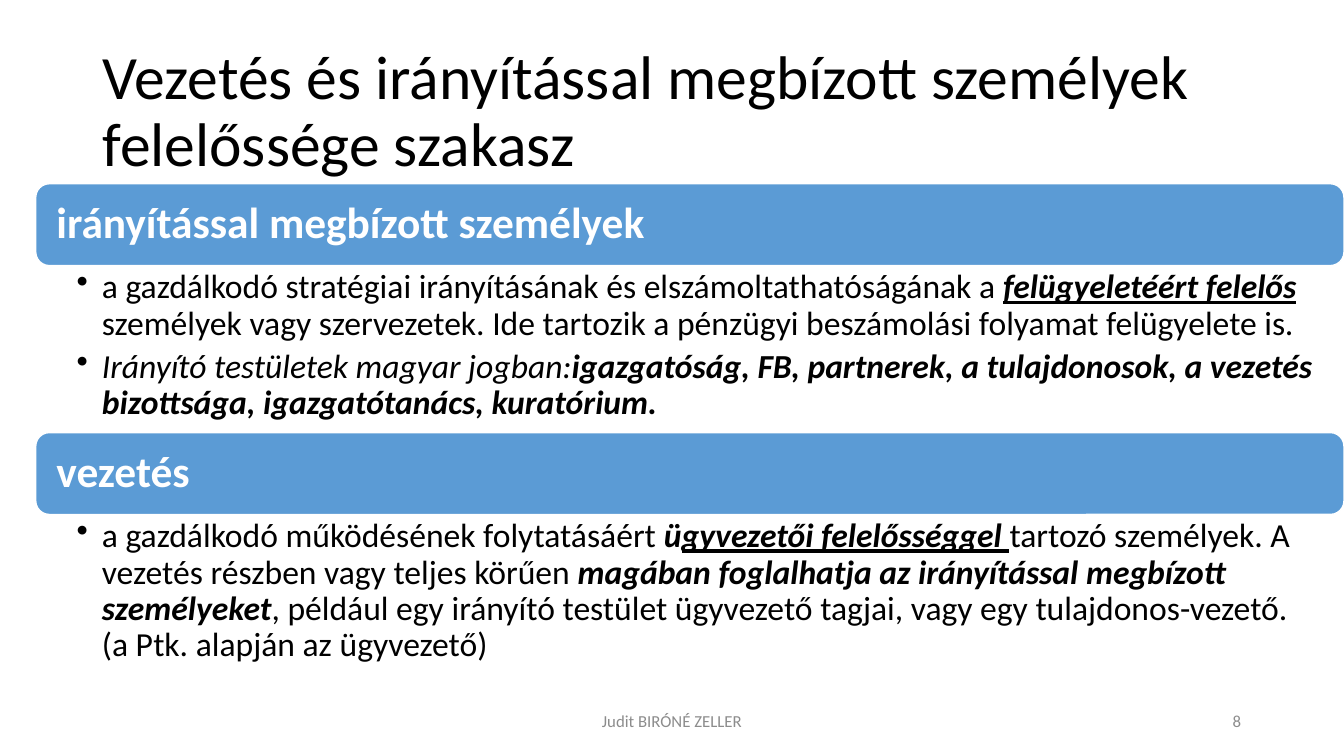
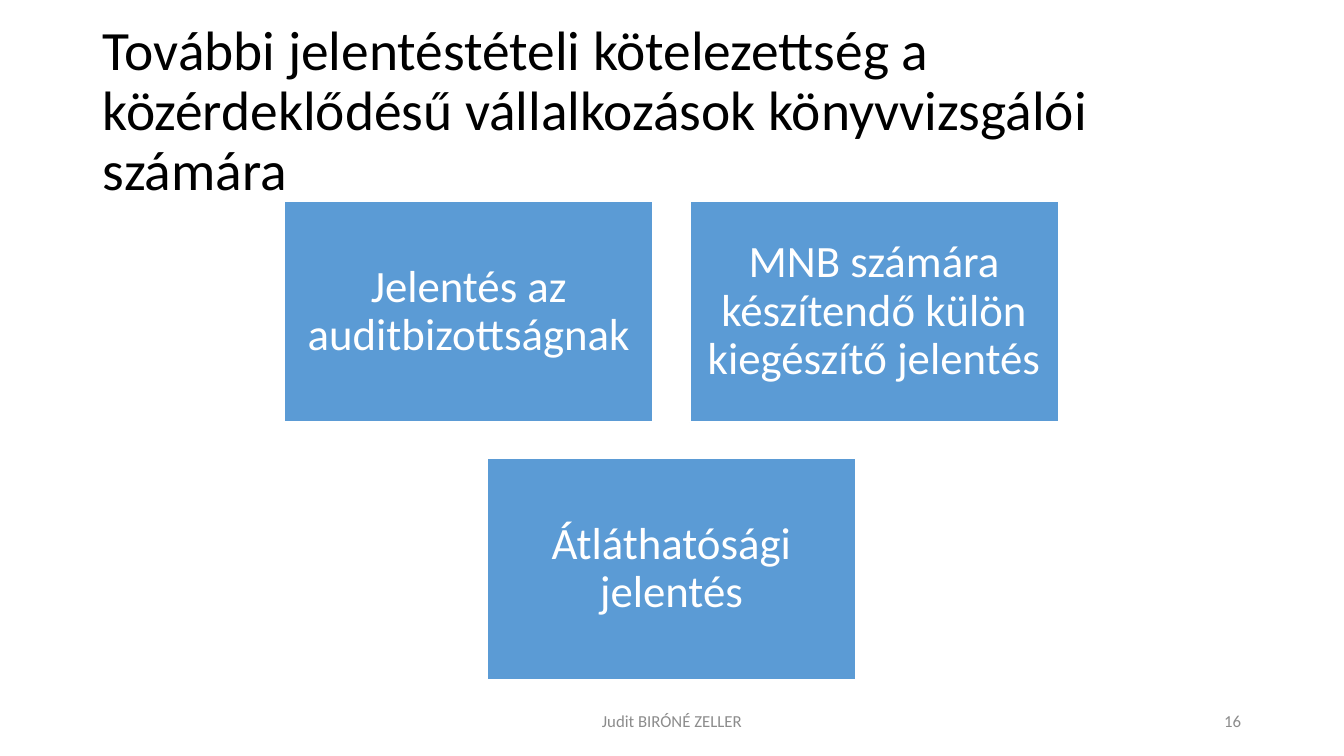
from dataclasses import dataclass

from lxml.etree import SubElement
from pptx import Presentation
from pptx.dml.color import RGBColor
from pptx.enum.shapes import MSO_SHAPE as Shape
from pptx.enum.text import MSO_ANCHOR as Anchor, PP_ALIGN as Align
from pptx.oxml.ns import qn
from pptx.util import Pt

PX = 9525  # EMU in one px
SLIDE_WIDTH, SLIDE_HEIGHT = 1280, 720


@dataclass(frozen=True)
class Theme:
    font: str = "Calibri"
    ink: str = "000000"
    paper: str = "FFFFFF"
    accent: str = "5B9BD5"
    muted: str = "8C8C8C"
    title_size: float = 44
    small_title_size: float = 39.6
    box_size: float = 32
    band_size: float = 31
    body_size: float = 24
    footer_size: float = 12
    line_spacing: float = 0.9
    bullet_gap: float = 5
    author: str = "Judit BIRÓNÉ ZELLER"


class Slides:
    """Holds the style, the deck and the current slide."""

    def __init__(self, theme):
        self.theme = theme
        self.deck = Presentation()
        self.deck.slide_width = SLIDE_WIDTH * PX
        self.deck.slide_height = SLIDE_HEIGHT * PX
        self.slide = None

    def new_slide(self, title, number, title_size):
        self.slide = self.deck.slides.add_slide(self.deck.slide_layouts[6])
        theme = self.theme
        self.text(title, (88, 38, 1104, 139), title_size, theme.ink,
                  spacing=theme.line_spacing)
        self.text(theme.author, (424, 667, 432, 38), theme.footer_size,
                  theme.muted, Align.CENTER)
        self.text(str(number), (904, 667, 288, 38), theme.footer_size,
                  theme.muted, Align.RIGHT)

    def frame(self, shape, anchor, insets):
        frame = shape.text_frame
        frame.word_wrap = True
        frame.vertical_anchor = anchor
        (frame.margin_left, frame.margin_top, frame.margin_right,
         frame.margin_bottom) = (inset * PX for inset in insets)
        return frame

    def style(self, para, size, color, align=Align.LEFT, spacing=1.0, bold=False):
        para.alignment = align
        para.line_spacing = spacing
        font = para.font
        font.name, font.size, font.bold = self.theme.font, Pt(size), bold
        font.color.rgb = RGBColor.from_string(color)

    def text(self, words, area, size, color, align=Align.LEFT, spacing=1.0):
        box = self.slide.shapes.add_textbox(*(length * PX for length in area))
        frame = self.frame(box, Anchor.MIDDLE, (10, 5, 10, 5))
        frame.text = words
        self.style(frame.paragraphs[0], size, color, align, spacing)

    def block(self, kind, words, area, size, align, inset, bold=False):
        box = self.slide.shapes.add_shape(kind, *(length * PX for length in area))
        box.shadow.inherit = False
        box.fill.solid()
        box.fill.fore_color.rgb = RGBColor.from_string(self.theme.accent)
        box.line.color.rgb = RGBColor.from_string(self.theme.paper)
        box.line.width = Pt(1)
        frame = self.frame(box, Anchor.MIDDLE, (inset, 12, inset, 12))
        frame.text = words
        self.style(frame.paragraphs[0], size, self.theme.paper, align,
                   self.theme.line_spacing, bold)

    def band(self, words, area):
        self.block(Shape.ROUNDED_RECTANGLE, words, area, self.theme.band_size,
                   Align.LEFT, 16, bold=True)

    def box(self, words, area):
        self.block(Shape.RECTANGLE, words, area, self.theme.box_size,
                   Align.CENTER, 12)

    def bullets(self, items, area):
        """Each item is a list of (words, marks); marks are from b, i and u."""
        box = self.slide.shapes.add_textbox(*(length * PX for length in area))
        frame = self.frame(box, Anchor.TOP, (39, 4, 23, 4))
        for index, item in enumerate(items):
            para = frame.add_paragraph() if index else frame.paragraphs[0]
            self.style(para, self.theme.body_size, self.theme.ink,
                       spacing=self.theme.line_spacing)
            para.space_after = Pt(self.theme.bullet_gap)
            self.bullet(para)
            for words, marks in item:
                span = para.add_run()
                span.text = words
                span.font.bold = "b" in marks
                span.font.italic = "i" in marks
                span.font.underline = "u" in marks

    def bullet(self, para):
        props = para._p.get_or_add_pPr()
        props.set("marL", str(24 * PX))
        props.set("indent", str(-24 * PX))
        mark = SubElement(props, qn("a:buChar"))
        mark.set("char", "•")
        # The bullet comes before the default run properties
        defaults = props.find(qn("a:defRPr"))
        if defaults is not None:
            defaults.addprevious(mark)


SECTIONS = [
    ("irányítással megbízott személyek", 159, [
        [("a gazdálkodó stratégiai irányításának és elszámoltathatóságának a ", ""),
         ("felügyeletéért felelős", "biu"),
         (" ", "u"),
         ("személyek vagy szervezetek. Ide tartozik a pénzügyi beszámolási "
          "folyamat felügyelete is", ""),
         (".", "i")],
        [("Irányító testületek magyar jogban:", "i"),
         ("igazgatóság, FB, partnerek, a tulajdonosok, a vezetés bizottsága, "
          "igazgatótanács, kuratórium.", "bi")],
    ]),
    ("vezetés", 152, [
        [("a gazdálkodó működésének folytatásáért ", ""),
         ("ü", "bi"),
         ("gyvezetői felelősséggel ", "biu"),
         ("tartozó személyek. A vezetés részben vagy teljes körűen ", ""),
         ("magában foglalhatja az irányítással megbízott személyeket", "bi"),
         (", például egy irányító testület ügyvezető tagjai, vagy egy "
          "tulajdonos-vezető. (a Ptk. alapján az ügyvezető)", "")],
    ]),
]

REPORT_ROWS = [
    ["Jelentés az auditbizottságnak",
     "MNB számára készítendő külön kiegészítő jelentés"],
    ["Átláthatósági jelentés"],
]


def responsibility_slide(slides):
    slides.new_slide("Vezetés és irányítással megbízott személyek felelőssége szakasz",
                     8, slides.theme.title_size)
    # Bands and their bullets, stacked without gaps
    left, top, width, band_height = 34, 175, 1246, 78
    for heading, body_height, items in SECTIONS:
        slides.band(heading, (left, top, width, band_height))
        top += band_height
        slides.bullets(items, (left, top, width, body_height))
        top += body_height


def reports_slide(slides):
    slides.new_slide("További jelentéstételi kötelezettség a közérdeklődésű "
                     "vállalkozások könyvvizsgálói számára",
                     16, slides.theme.small_title_size)
    # Rows of equal boxes, each row centred on the slide
    top, width, height, gap = 192, 351, 210, 35
    for row in REPORT_ROWS:
        left = (SLIDE_WIDTH - len(row) * (width + gap) + gap) // 2
        for words in row:
            slides.box(words, (left, top, width, height))
            left += width + gap
        top += height + gap


def main():
    slides = Slides(Theme())
    responsibility_slide(slides)
    reports_slide(slides)
    slides.deck.save("out.pptx")


if __name__ == "__main__":
    main()
